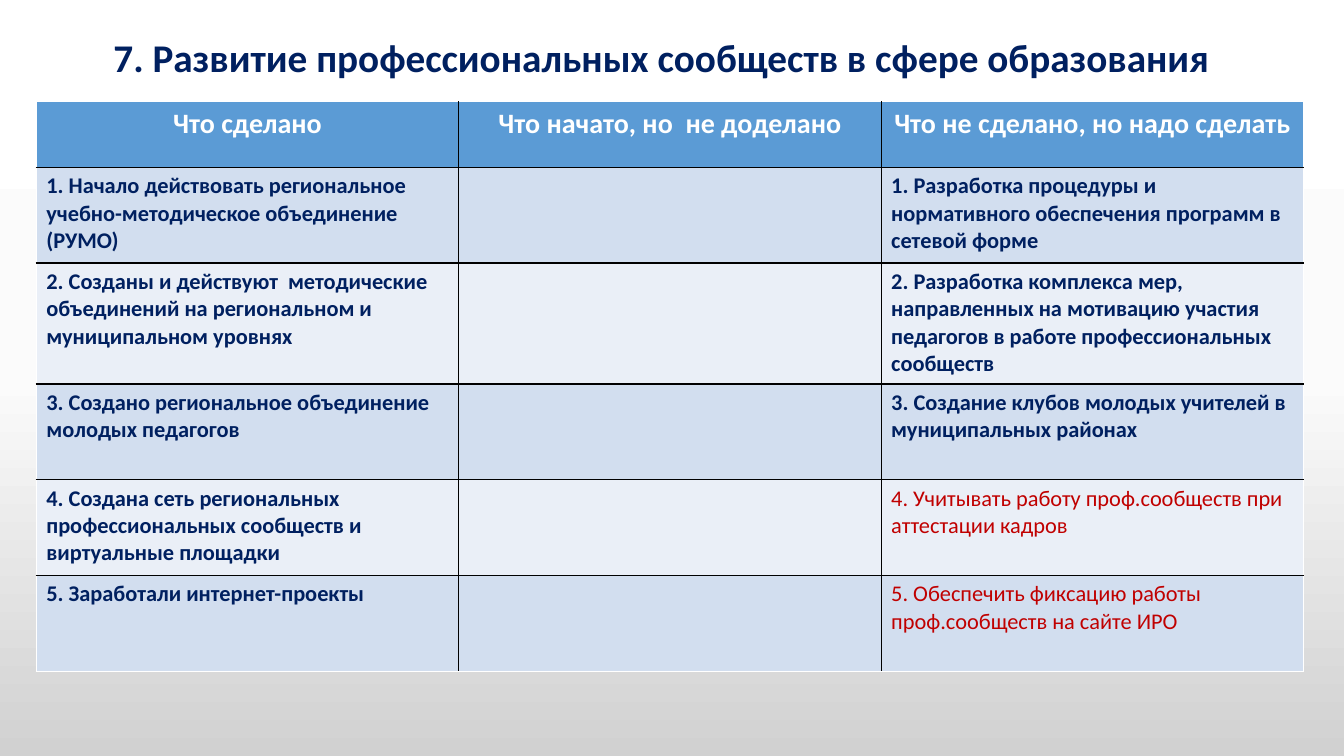
from copy import deepcopy

from lxml.etree import SubElement as Sub
from pptx import Presentation
from pptx.dml.color import RGBColor
from pptx.enum.text import MSO_ANCHOR as Anchor, PP_ALIGN as Align
from pptx.oxml.ns import qn
from pptx.util import Inches, Pt

NAVY, RED, WHITE, BLACK = "002060", "C00000", "FFFFFF", "000000"
HEAD, BANDS = "5B9BD5", ("D2DEEF", "EAEFF7")
GRADIENT = [(0, "FFFFFF"), (0.5, "FBFBFB"), (1, "D1D1D1")]

TITLE = "7. Развитие профессиональных сообществ в сфере образования "
HEADS = ["Что сделано", "Что начато, но  не доделано", "Что не сделано, но надо сделать"]
DONE = [
    "1. Начало действовать региональное учебно-методическое объединение (РУМО)",
    "2. Созданы и действуют  методические объединений на региональном и муниципальном уровнях",
    "3. Создано региональное объединение молодых педагогов",
    "4. Создана сеть региональных профессиональных сообществ и виртуальные площадки",
    "5. Заработали интернет-проекты",
]
TODO = [
    "1. Разработка процедуры и нормативного обеспечения программ в сетевой форме",
    "2. Разработка комплекса мер, направленных на мотивацию участия педагогов "
    "в работе профессиональных сообществ",
    "3. Создание клубов молодых учителей в муниципальных районах",
    "4. Учитывать работу проф.сообществ при аттестации кадров",
    "5. Обеспечить фиксацию работы проф.сообществ на сайте ИРО",
]
ROWS = [HEADS] + [[done, "", todo] for done, todo in zip(DONE, TODO)]
HEIGHTS = [0.65, 0.95, 1.2, 0.95, 0.95, 0.95]
WIDTH = 4.19
RED_FROM = 4  # first row whose last column is red and not bold


def rgb(color):
    return RGBColor.from_string(color)


def write(frame, text, size=16, color=NAVY, bold=True, align=Align.LEFT, spacing=None):
    para = frame.paragraphs[0]
    para.alignment = align
    para.line_spacing = spacing
    run = para.add_run()
    run.text = text
    font = run.font
    font.name, font.size, font.bold = "Calibri", Pt(size), bold
    font.color.rgb = rgb(color)


def border(cell, **sides):
    """Draw 1 pt cell borders; sides come in the order L, R, T, B."""
    props = cell._tc.get_or_add_tcPr()
    for side, color in sides.items():
        line = Sub(props, qn(f"a:ln{side}"), w=str(Pt(1)))
        Sub(Sub(line, qn("a:solidFill")), qn("a:srgbClr"), val=color)


def paint(slide):
    """Give the slide its three-stop grey background."""
    fill = slide.background.fill
    fill.gradient()
    fill.gradient_angle = 270
    stops = slide.element.find(".//" + qn("a:gsLst"))
    stops.append(deepcopy(stops[0]))
    for stop, (pos, color) in zip(fill.gradient_stops, GRADIENT):
        stop.position = pos
        stop.color.rgb = rgb(color)


def add_grid(slide):
    rows, cols = len(ROWS), len(HEADS)
    grid = slide.shapes.add_table(
        rows, cols, Inches(0.36), Inches(1.01),
        Inches(WIDTH * cols), Inches(sum(HEIGHTS))).table
    for col in grid.columns:
        col.width = Inches(WIDTH)
    for r, texts in enumerate(ROWS):
        grid.rows[r].height = Inches(HEIGHTS[r])
        for c, text in enumerate(texts):
            cell = grid.cell(r, c)
            border(cell,
                   L=BLACK if c else WHITE,
                   R=BLACK if c < cols - 1 else WHITE,
                   T=BLACK if r else WHITE,
                   B=BLACK if r < rows - 1 else WHITE)
            cell.fill.solid()
            cell.fill.fore_color.rgb = rgb(BANDS[(r - 1) % 2] if r else HEAD)
            if r == 0:
                write(cell.text_frame, text, size=20, color=WHITE, align=Align.CENTER)
            elif text:
                late = c == cols - 1 and r >= RED_FROM
                write(cell.text_frame, text, color=RED if late else NAVY, bold=not late)


def main():
    deck = Presentation()
    deck.slide_width, deck.slide_height = Inches(13.33), Inches(7.5)
    slide = deck.slides.add_slide(deck.slide_layouts[5])
    paint(slide)
    title = slide.shapes.title
    title.left, title.top = Inches(0.23), Inches(0.16)
    title.width, title.height = Inches(12.74), Inches(0.87)
    title.text_frame.vertical_anchor = Anchor.MIDDLE
    write(title.text_frame, TITLE, size=28, align=Align.CENTER, spacing=0.9)
    add_grid(slide)
    deck.save("out.pptx")


if __name__ == "__main__":
    main()
